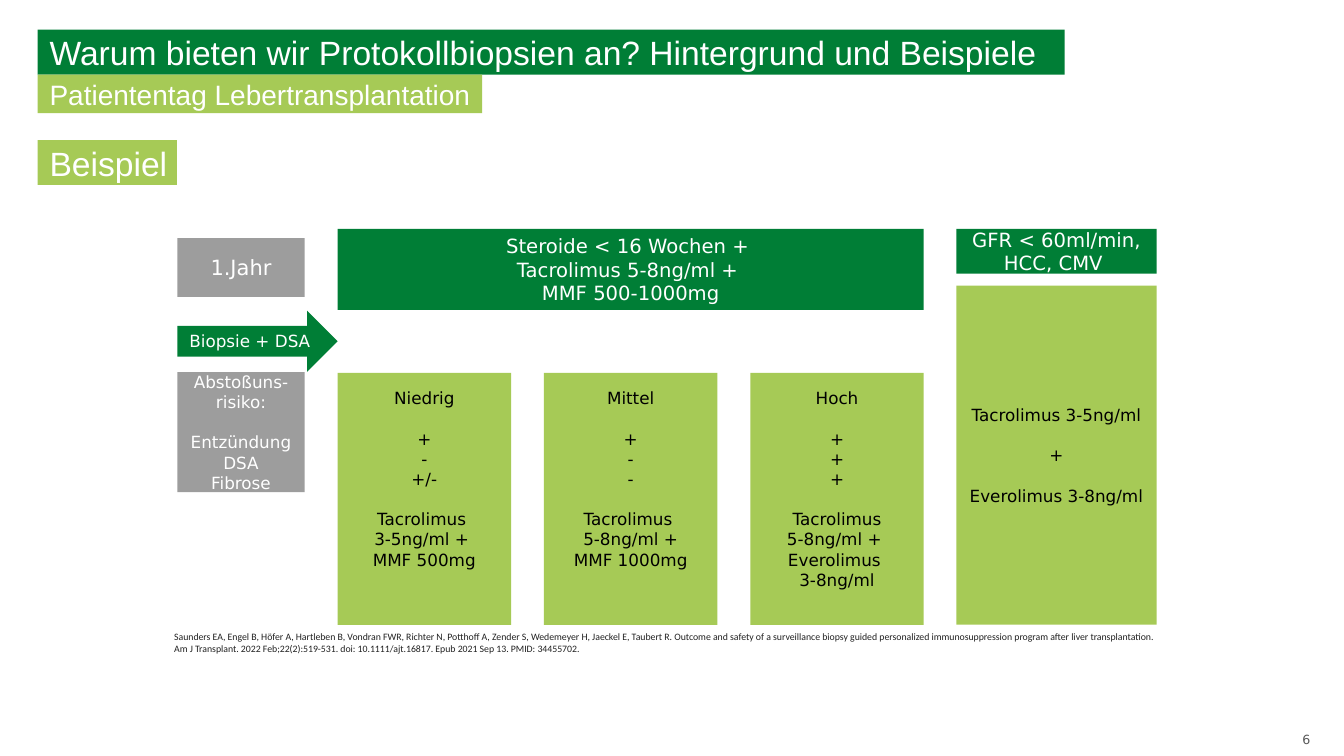
from dataclasses import dataclass

from pptx import Presentation
from pptx.dml.color import RGBColor
from pptx.enum.shapes import MSO_SHAPE
from pptx.enum.text import MSO_ANCHOR, PP_ALIGN
from pptx.slide import Slide
from pptx.util import Cm, Pt

COLORS = {
    "dark_green": "007E36",
    "light_green": "A6CA56",
    "grey": "9D9D9D",
    "white": "FFFFFF",
    "black": "000000",
    "citation": "212121",
    "page_number": "595959",
}
BODY_FONT = "DejaVu Sans"
BLANK_LAYOUT = 6
GROUP_GAP = Pt(14.4)

# Shared edges of the diagram, in centimetres
LABEL_LEFT, LABEL_WIDTH = 4.47, 3.21
CARD_LEFT, CARD_TOP, CARD_WIDTH, CARD_HEIGHT = 8.51, 9.4, 4.37, 6.35
CARD_PITCH = 5.2
ALTERNATIVE_LEFT, ALTERNATIVE_WIDTH = 24.1, 5.05
DIAGRAM_TOP = 5.77

Groups = tuple[tuple[str, ...], ...]


@dataclass(frozen=True)
class Box:
    """Text box, filled if a fill is named; lengths in centimetres."""

    left: float
    top: float
    width: float
    height: float
    groups: Groups
    size: float = 12
    fill: str | None = None
    color: str = "white"
    font: str = BODY_FONT
    alignment: PP_ALIGN = PP_ALIGN.CENTER
    anchor: MSO_ANCHOR = MSO_ANCHOR.MIDDLE
    margins: tuple[float, float, float, float] = (0.25, 0, 0.25, 0)
    preset: MSO_SHAPE = MSO_SHAPE.RECTANGLE


def heading(top: float, width: float, height: float, text: str,
            size: float, fill: str) -> Box:
    return Box(0.95, top, width, height, ((text,),), size, fill, font="Arial",
               alignment=PP_ALIGN.LEFT, anchor=MSO_ANCHOR.BOTTOM,
               margins=(0.3, 0.05, 0, 0.05))


def risk_card(column: int, groups: Groups) -> Box:
    return Box(CARD_LEFT + column * CARD_PITCH, CARD_TOP, CARD_WIDTH, CARD_HEIGHT,
               groups, fill="light_green", color="black",
               anchor=MSO_ANCHOR.TOP, margins=(0.25, 0.38, 0.25, 0))


RISK_GROUPS: tuple[Groups, ...] = (
    (("Niedrig",), ("+", "-", "+/-"),
     ("Tacrolimus ", "3-5ng/ml + ", "MMF 500mg")),
    (("Mittel",), ("+", "-", "-"),
     ("Tacrolimus ", "5-8ng/ml +", "MMF 1000mg")),
    (("Hoch",), ("+", "+", "+"),
     ("Tacrolimus", "5-8ng/ml + ", "Everolimus ", "3-8ng/ml")),
)

CITATION = (
    "Saunders EA, Engel B, Höfer A, Hartleben B, Vondran FWR, Richter N, Potthoff A, "
    "Zender S, Wedemeyer H, Jaeckel E, Taubert R. Outcome and safety of a surveillance "
    "biopsy guided personalized immunosuppression program after liver transplantation. "
    "Am J Transplant. 2022 Feb;22(2):519-531. doi: 10.1111/ajt.16817. "
    "Epub 2021 Sep 13. PMID: 34455702."
)

BOXES = (
    heading(0.75, 25.88, 1.13,
            "Warum bieten wir Protokollbiopsien an? Hintergrund und Beispiele",
            24, "dark_green"),
    heading(1.88, 11.2, 0.97, "Patiententag Lebertransplantation", 20, "light_green"),
    heading(3.53, 3.51, 1.13, "Beispiel", 24, "light_green"),
    Box(CARD_LEFT, DIAGRAM_TOP, 2 * CARD_PITCH + CARD_WIDTH, 2.04,
        (("Steroide < 16 Wochen + ", "Tacrolimus 5-8ng/ml + ", "MMF 500-1000mg"),),
        14, "dark_green"),
    Box(LABEL_LEFT, 6, LABEL_WIDTH, 1.48, (("1.Jahr",),), 15, "grey"),
    Box(LABEL_LEFT, 9.38, LABEL_WIDTH, 3.02,
        (("Abstoßuns-risiko:",), ("Entzündung", "DSA", "Fibrose")), fill="grey"),
    Box(LABEL_LEFT, 7.83, CARD_LEFT - LABEL_LEFT, 1.54, (("Biopsie + DSA",),),
        fill="dark_green", preset=MSO_SHAPE.RIGHT_ARROW),
    *(risk_card(column, groups) for column, groups in enumerate(RISK_GROUPS)),
    Box(ALTERNATIVE_LEFT, 7.2, ALTERNATIVE_WIDTH, 8.54,
        (("Tacrolimus 3-5ng/ml",), ("+",), ("Everolimus 3-8ng/ml",)),
        fill="light_green", color="black"),
    Box(ALTERNATIVE_LEFT, DIAGRAM_TOP, ALTERNATIVE_WIDTH, 1.13,
        (("GFR < 60ml/min, HCC, CMV ",),), 14, "dark_green"),
    Box(4.14, 15.77, 25.37, 0.86, ((CITATION,),), 7, color="citation",
        font="Calibri", alignment=PP_ALIGN.LEFT, anchor=MSO_ANCHOR.TOP,
        margins=(0.25, 0.13, 0.25, 0.13)),
    Box(30.33, 18.31, 2.69, 0.51, (("6",),), 9, color="page_number",
        alignment=PP_ALIGN.RIGHT, anchor=MSO_ANCHOR.BOTTOM, margins=(0, 0, 0, 0)),
)


def rgb(name: str) -> RGBColor:
    return RGBColor.from_string(COLORS[name])


def draw_box(slide: Slide, box: Box) -> None:
    place = [Cm(length) for length in (box.left, box.top, box.width, box.height)]
    if box.fill is None:
        shape = slide.shapes.add_textbox(*place)
    else:
        shape = slide.shapes.add_shape(box.preset, *place)
        shape.shadow.inherit = False
        shape.fill.solid()
        shape.fill.fore_color.rgb = rgb(box.fill)
        shape.line.fill.background()
    write_text(shape.text_frame, box)


def write_text(frame, box: Box) -> None:
    """Write each line as a paragraph, with a gap between groups."""
    frame.word_wrap = True
    frame.vertical_anchor = box.anchor
    (frame.margin_left, frame.margin_top,
     frame.margin_right, frame.margin_bottom) = map(Cm, box.margins)
    paragraph = None
    for group in box.groups:
        for position, text in enumerate(group):
            if paragraph is None:
                paragraph = frame.paragraphs[0]
            else:
                paragraph = frame.add_paragraph()
                if position == 0:
                    paragraph.space_before = GROUP_GAP
            paragraph.alignment = box.alignment
            run = paragraph.add_run()
            run.text = text
            run.font.name = box.font
            run.font.size = Pt(box.size)
            run.font.color.rgb = rgb(box.color)


def main() -> None:
    presentation = Presentation()
    presentation.slide_width = Cm(33.87)
    presentation.slide_height = Cm(19.05)
    slide = presentation.slides.add_slide(presentation.slide_layouts[BLANK_LAYOUT])
    for box in BOXES:
        draw_box(slide, box)
    presentation.save("out.pptx")


if __name__ == "__main__":
    main()
